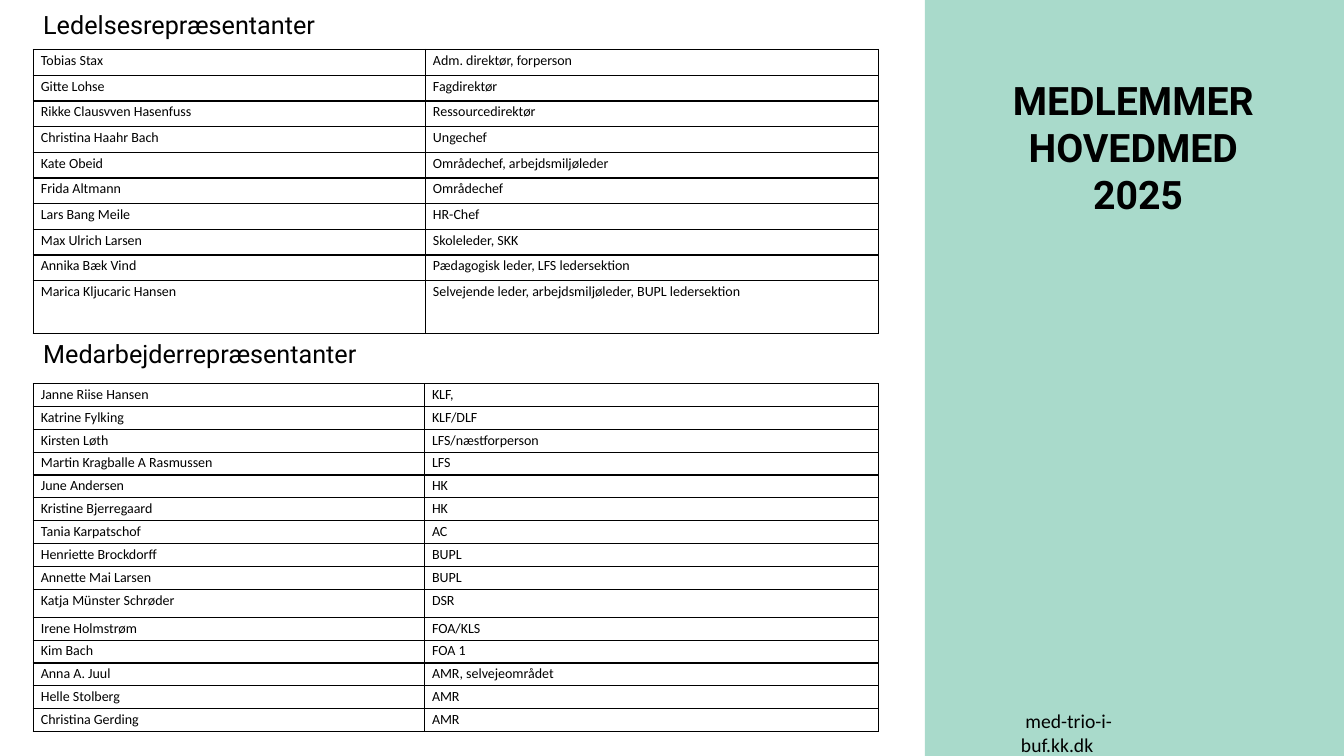
from dataclasses import dataclass

from lxml.etree import SubElement
from pptx import Presentation
from pptx.dml.color import RGBColor
from pptx.enum.shapes import MSO_SHAPE as Shape
from pptx.enum.text import MSO_ANCHOR as Anchor, MSO_AUTO_SIZE as Fit, PP_ALIGN as Align
from pptx.oxml.ns import qn
from pptx.slide import Slide
from pptx.text.text import TextFrame
from pptx.util import Pt

COLORS = {"ink": "000000", "mint": "A9DACB"}
LEFT = 23.8
WIDTH = 603.7


@dataclass(frozen=True)
class Label:
    text: str
    left: float
    top: float
    width: float
    height: float
    font: str
    size: float
    inset: bool = True


@dataclass(frozen=True)
class Roster:
    top: float
    split: float
    step: float
    tall: dict[int, float]
    people: list[tuple[str, str]]


LABELS = [
    Label("Ledelsesrepræsentanter", LEFT, 2.9, 236, 29, "Roboto", 18),
    Label("Medarbejderrepræsentanter", LEFT, 238.4, 393, 29, "Roboto", 18),
    Label(" med-trio-i-buf.kk.dk", 729.3, 506.4, 100, 17, "Calibri", 14, False),
]

LEADERS = Roster(35.4, 280.1, 18.35, {9: 37.9}, [
    ("Tobias Stax", "Adm. direktør, forperson"),
    ("Gitte Lohse", "Fagdirektør"),
    ("Rikke Clausvven Hasenfuss", "Ressourcedirektør"),
    ("Christina Haahr Bach", "Ungechef"),
    ("Kate Obeid", "Områdechef, arbejdsmiljøleder"),
    ("Frida Altmann", "Områdechef"),
    ("Lars Bang Meile", "HR-Chef"),
    ("Max Ulrich Larsen", "Skoleleder, SKK"),
    ("Annika Bæk Vind", "Pædagogisk leder, LFS ledersektion"),
    ("Marica Kljucaric Hansen", "Selvejende leder, arbejdsmiljøleder, BUPL ledersektion"),
])

STAFF = Roster(274, 279.4, 16.35, {9: 20}, [
    ("Janne Riise Hansen", "KLF,"),
    ("Katrine Fylking", "KLF/DLF"),
    ("Kirsten Løth", "LFS/næstforperson"),
    ("Martin Kragballe A Rasmussen", "LFS"),
    ("June Andersen", "HK"),
    ("Kristine Bjerregaard", "HK"),
    ("Tania Karpatschof", "AC"),
    ("Henriette Brockdorff", "BUPL"),
    ("Annette Mai Larsen", "BUPL"),
    ("Katja Münster Schrøder", "DSR"),
    ("Irene Holmstrøm", "FOA/KLS"),
    ("Kim Bach", "FOA 1"),
    ("Anna A. Juul", "AMR, selvejeområdet"),
    ("Helle Stolberg", "AMR"),
    ("Christina Gerding", "AMR"),
])


def rgb(name: str) -> RGBColor:
    return RGBColor.from_string(COLORS[name])


def write(frame: TextFrame, text: str, font: str, size: float, bold: bool = False) -> None:
    frame.text = text
    for para in frame.paragraphs:
        para.font.name = font
        para.font.size = Pt(size)
        para.font.bold = bold
        para.font.color.rgb = rgb("ink")


def add_label(slide: Slide, label: Label) -> None:
    box = slide.shapes.add_textbox(
        Pt(label.left), Pt(label.top), Pt(label.width), Pt(label.height))
    frame = box.text_frame
    frame.word_wrap = True
    if not label.inset:
        frame.margin_left = frame.margin_right = 0
        frame.margin_top = frame.margin_bottom = 0
    write(frame, label.text, label.font, label.size)


def fill_cell(cell, text: str) -> None:
    cell.margin_left = cell.margin_right = Pt(5.4)
    cell.margin_top = cell.margin_bottom = 0
    write(cell.text_frame, text, "Calibri", 10)
    para = cell.text_frame.paragraphs[0]
    para.line_spacing = 1.15
    para.space_after = Pt(10)
    props = cell._tc.get_or_add_tcPr()
    for side in ("lnL", "lnR", "lnT", "lnB"):
        line = SubElement(props, qn(f"a:{side}"), w=str(Pt(1)))
        paint = SubElement(line, qn("a:solidFill"))
        SubElement(paint, qn("a:srgbClr"), val=COLORS["ink"])
    cell.fill.background()


def add_roster(slide: Slide, roster: Roster) -> None:
    count = len(roster.people)
    heights = [roster.tall.get(i, roster.step) for i in range(count)]
    table = slide.shapes.add_table(
        count, 2, Pt(LEFT), Pt(roster.top), Pt(WIDTH), Pt(sum(heights))).table
    table.first_row = table.horz_banding = False
    table.columns[0].width = Pt(roster.split)
    table.columns[1].width = Pt(WIDTH - roster.split)
    for row, height, person in zip(table.rows, heights, roster.people):
        row.height = Pt(height)
        for cell, text in zip(row.cells, person):
            fill_cell(cell, text)


def add_panel(slide: Slide) -> None:
    panel = slide.shapes.add_shape(Shape.RECTANGLE, Pt(660.7), 0, Pt(299.3), Pt(540))
    panel.shadow.inherit = False
    panel.fill.solid()
    panel.fill.fore_color.rgb = rgb("mint")
    panel.line.fill.background()
    slide.shapes.title.element.addprevious(panel.element)


def set_title(slide: Slide) -> None:
    title = slide.shapes.title
    title.left, title.top = Pt(676.8), Pt(51.1)
    title.width, title.height = Pt(272.2), Pt(108.7)
    frame = title.text_frame
    frame.word_wrap = True
    frame.auto_size = Fit.NONE
    frame.vertical_anchor = Anchor.TOP
    write(frame, "MEDLEMMER \vHOVEDMED \n2025", "Roboto", 28, True)
    for para in frame.paragraphs:
        para.alignment = Align.CENTER


def main() -> None:
    deck = Presentation()
    deck.slide_width, deck.slide_height = Pt(960), Pt(540)
    slide = deck.slides.add_slide(deck.slide_layouts[5])
    add_panel(slide)
    set_title(slide)
    for roster in (STAFF, LEADERS):
        add_roster(slide, roster)
    for label in LABELS:
        add_label(slide, label)
    deck.save("out.pptx")


if __name__ == "__main__":
    main()
